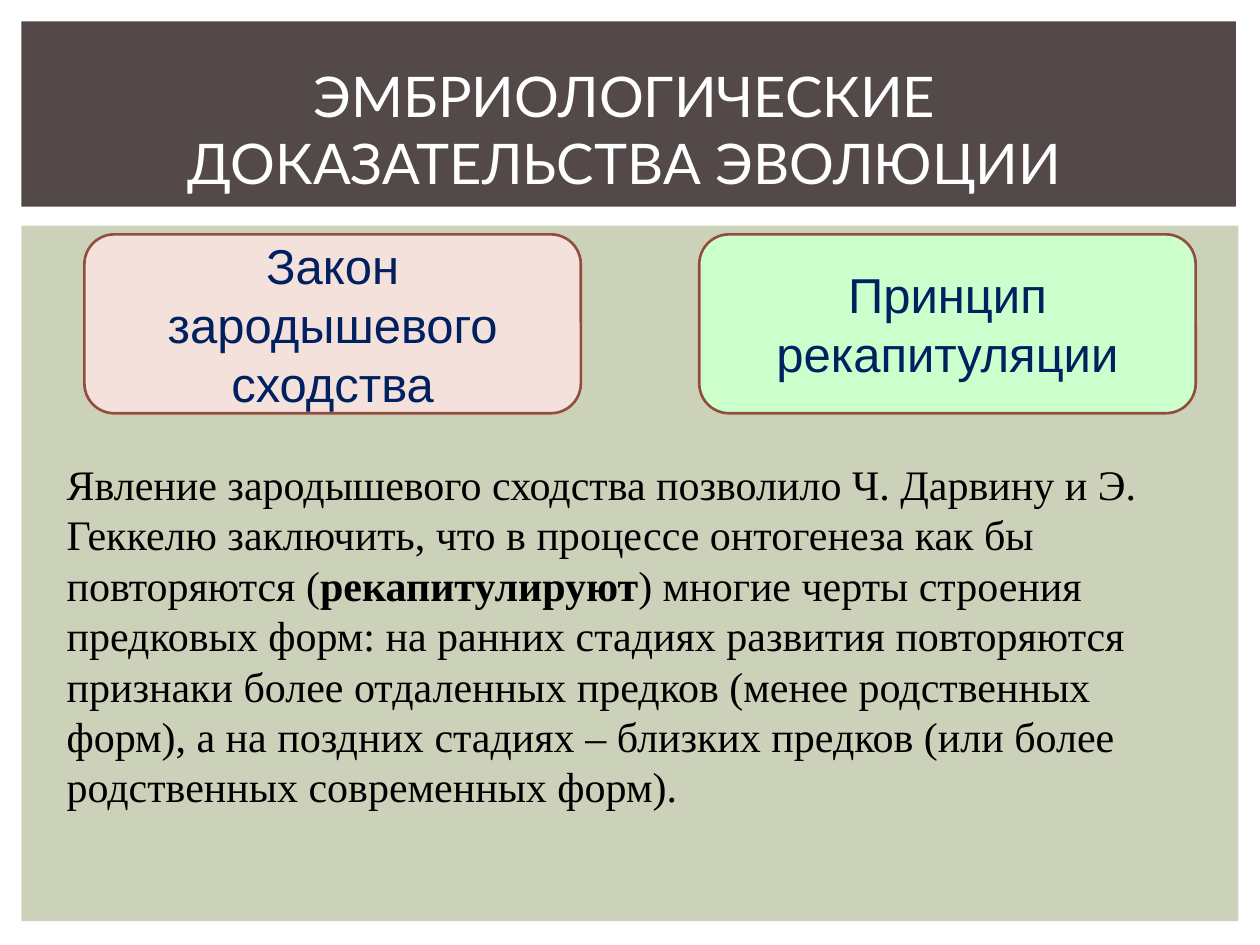
import pptx
import pptx.util
import pptx.dml.color
import pptx.enum.shapes
import pptx.enum.text

SHAPES = pptx.enum.shapes.MSO_SHAPE
ALIGN = pptx.enum.text.PP_ALIGN
ANCHOR = pptx.enum.text.MSO_ANCHOR
INCH = pptx.util.Inches

LAW_LEFT, LAW_STEP = 0.67, 4.88
LAWS = [
    ("Закон зародышевого сходства", "F4E1DC"),
    ("Принцип рекапитуляции", "CCFFCC"),
]
EXPLANATION = [
    ("Явление зародышевого сходства позволило Ч. Дарвину и Э. Геккелю заключить, "
     "что в процессе онтогенеза как бы повторяются (", False),
    ("рекапитулируют", True),
    (") многие черты строения предковых форм: на ранних стадиях развития "
     "повторяются признаки более отдаленных предков (менее родственных форм), "
     "а на поздних стадиях – близких предков (или более родственных "
     "современных форм).", False),
]


def color(value):
    return pptx.dml.color.RGBColor.from_string(value)


def apply_format(target, values):
    for name, value in values.items():
        setattr(target, name, value)


def place(box, left, top, width, height):
    apply_format(box, {"left": INCH(left), "top": INCH(top),
                       "width": INCH(width), "height": INCH(height)})


def write_text(box, pieces, font, size, hue, align, anchor):
    apply_format(box.text_frame, {"word_wrap": True, "vertical_anchor": anchor,
                                  "auto_size": pptx.enum.text.MSO_AUTO_SIZE.NONE})
    para = box.text_frame.paragraphs[0]
    para.alignment = align
    for text, bold in pieces:
        span = para.add_run()
        span.text = text
        apply_format(span.font, {"name": font, "size": pptx.util.Pt(size), "bold": bold})
        span.font.color.rgb = color(hue)


def add_panel(page, kind, area, fill, line=None):
    panel = page.shapes.add_shape(kind, *map(INCH, area))
    panel.shadow.inherit = False
    panel.fill.solid()
    panel.fill.fore_color.rgb = color(fill)
    if line:
        panel.line.color.rgb = color(line)
        panel.line.width = pptx.util.Pt(1.5)
    else:
        panel.line.fill.background()
    return panel


def add_law(page, column, text, fill):
    area = (LAW_LEFT + column * LAW_STEP, 1.86, 3.94, 1.42)
    card = add_panel(page, SHAPES.ROUNDED_RECTANGLE, area, fill, "924E3C")
    write_text(card, [(text, False)], "Arial", 28, "002060", ALIGN.CENTER, ANCHOR.MIDDLE)


def add_title(page, text):
    title = page.shapes.title
    place(title, 0.51, 0.44, 8.9, 1.18)
    write_text(title, [(text, False)], "Lato", 32, "FFFFFF", ALIGN.CENTER, ANCHOR.TOP)
    title.element.getparent().append(title.element)


def add_explanation(page):
    box = page.shapes.add_textbox(*map(INCH, (0.43, 3.59, 9.21, 2.93)))
    write_text(box, EXPLANATION, "Times New Roman", 24, "000000", ALIGN.LEFT, ANCHOR.TOP)


def main():
    deck = pptx.Presentation()
    apply_format(deck, {"slide_width": INCH(10), "slide_height": INCH(7.5)})
    page = deck.slides.add_slide(deck.slide_layouts.get_by_name("Title Only"))
    add_panel(page, SHAPES.RECTANGLE, (0.17, 1.79, 9.66, 5.52), "CCD1B9")
    add_panel(page, SHAPES.RECTANGLE, (0.17, 0.17, 9.64, 1.47), "534949")
    for column, (text, fill) in enumerate(LAWS):
        add_law(page, column, text, fill)
    add_title(page, "ЭМБРИОЛОГИЧЕСКИЕ ДОКАЗАТЕЛЬСТВА ЭВОЛЮЦИИ")
    add_explanation(page)
    deck.save("out.pptx")


if __name__ == "__main__":
    main()
